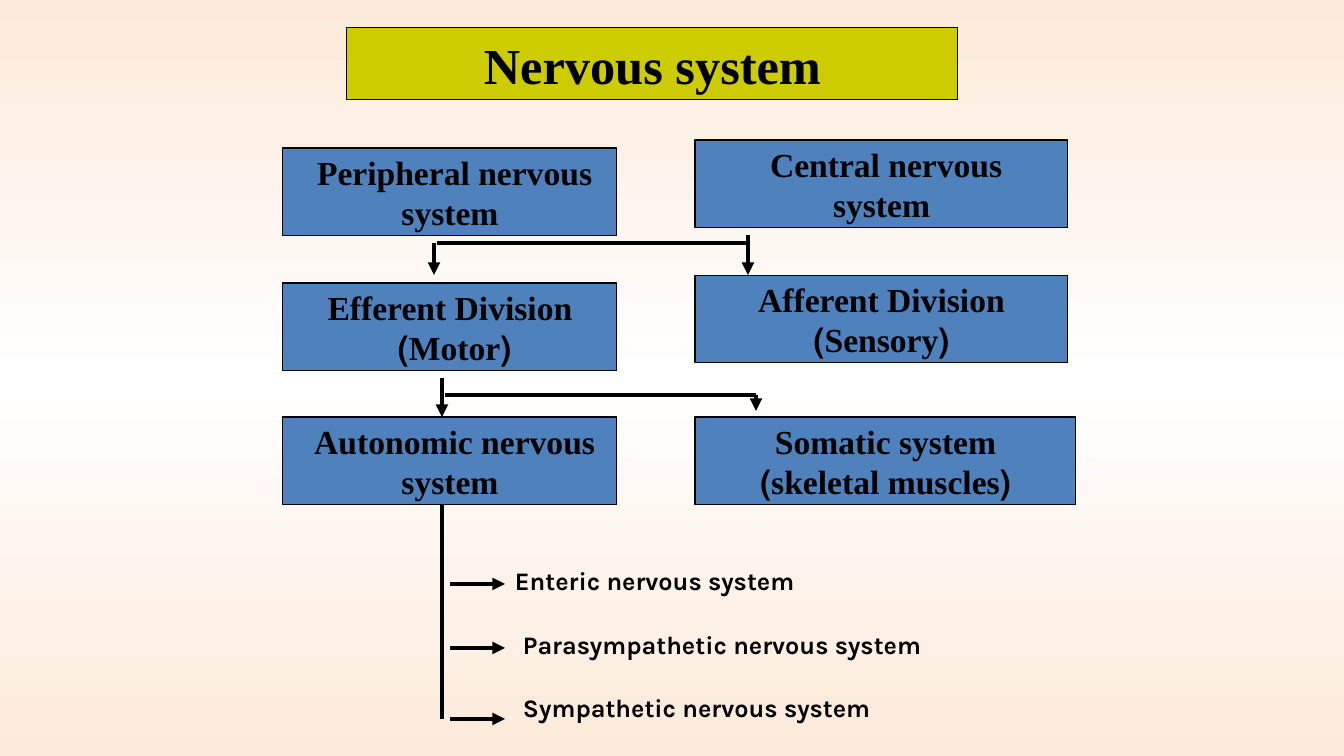
from copy import deepcopy

from lxml.etree import SubElement
from pptx import Presentation
from pptx.dml.color import RGBColor
from pptx.enum.shapes import MSO_CONNECTOR, MSO_SHAPE
from pptx.enum.text import MSO_ANCHOR, MSO_AUTO_SIZE, PP_ALIGN
from pptx.oxml.ns import qn
from pptx.util import Pt

BLACK = RGBColor(0x00, 0x00, 0x00)
WHITE = RGBColor(0xFF, 0xFF, 0xFF)
PEACH = RGBColor(0xFD, 0xEA, 0xDA)
OLIVE = RGBColor(0xCC, 0xCC, 0x00)
BLUE = RGBColor(0x4F, 0x81, 0xBD)


def px(value):
    return round(value * 914400 / 100.8)


class Diagram:
    box_font = "Times New Roman"
    label_font = "Karla"

    def __init__(self, prs):
        self.s = prs.slides.add_slide(prs.slide_layouts[6])

    def background(self, colors):
        fill = self.s.background.fill
        fill.gradient()
        fill.gradient_angle = 90
        first = self.s.element.find(".//" + qn("a:gs"))
        first.addnext(deepcopy(first))
        for i, (stop, color) in enumerate(zip(fill.gradient_stops, colors)):
            stop.position = i / 2
            stop.color.rgb = color

    def add_text(self, tf, lines, size, font, align):
        for i, line in enumerate(lines):
            p = tf.add_paragraph() if i else tf.paragraphs[0]
            p.alignment = align
            p._p.get_or_add_pPr().set("rtl", "1")
            r = p.add_run()
            r.text = line
            r.font.size = Pt(size)
            r.font.name = font
            r.font.bold = True
            r.font.color.rgb = BLACK

    def box(self, x, y, w, h, lines, fill=BLUE, size=24):
        sp = self.s.shapes.add_shape(MSO_SHAPE.RECTANGLE, px(x), px(y), px(w), px(h))
        sp.shadow.inherit = False
        sp.fill.solid()
        sp.fill.fore_color.rgb = fill
        sp.line.color.rgb = BLACK
        sp.line.width = Pt(0.75)
        tf = sp.text_frame
        tf.word_wrap = False
        tf.vertical_anchor = MSO_ANCHOR.MIDDLE
        self.add_text(tf, lines, size, self.box_font, PP_ALIGN.CENTER)

    def label(self, x, y, w, text):
        tf = self.s.shapes.add_textbox(px(x), px(y), px(w), px(40)).text_frame
        tf.word_wrap = True
        tf.auto_size = MSO_AUTO_SIZE.SHAPE_TO_FIT_TEXT
        self.add_text(tf, [text], 18, self.label_font, PP_ALIGN.LEFT)

    def line(self, x1, y1, x2, y2, arrow=True):
        c = self.s.shapes.add_connector(
            MSO_CONNECTOR.STRAIGHT, px(x1), px(y1), px(x2), px(y2))
        c.line.color.rgb = BLACK
        c.line.width = Pt(3)
        spPr = c._element.spPr
        if arrow:
            SubElement(spPr.find(qn("a:ln")), qn("a:tailEnd"), type="triangle")
        SubElement(spPr, qn("a:effectLst"))


def main():
    prs = Presentation()
    prs.slide_width, prs.slide_height = px(1344), px(756)
    d = Diagram(prs)
    d.background([PEACH, WHITE, PEACH])

    d.box(347, 28, 611, 72, ["Nervous system"], OLIVE, 36)
    for x, y, w, lines in [
        (283, 148, 334, ["Peripheral nervous ", "system"]),
        (695, 140, 373, ["Central nervous ", "system"]),
        (283, 283, 334, ["Efferent Division", "(Motor) "]),
        (695, 275, 373, ["Afferent Division", "(Sensory)"]),
        (283, 417, 334, ["Autonomic nervous ", "system"]),
        (695, 417, 381, ["Somatic system", "(skeletal muscles)"]),
    ]:
        d.box(x, y, w, 88, lines)

    d.line(442, 505, 442, 719, arrow=False)
    for arrow_y, x, y, w, text in [
        (584, 505, 560, 350, "Enteric nervous system"),
        (648, 513, 624, 439, "Parasympathetic nervous system"),
        (719, 513, 687, 384, "Sympathetic nervous system"),
    ]:
        d.line(450, arrow_y, 505, arrow_y)
        d.label(x, y, w, text)

    for x, top, bottom in [(434, 243, 275), (442, 378, 417), (748, 235, 275), (756, 395, 411)]:
        d.line(x, top, x, bottom)
    d.line(445, 395, 756, 395, arrow=False)
    d.line(437, 243, 748, 243, arrow=False)

    prs.save("out.pptx")


if __name__ == "__main__":
    main()
